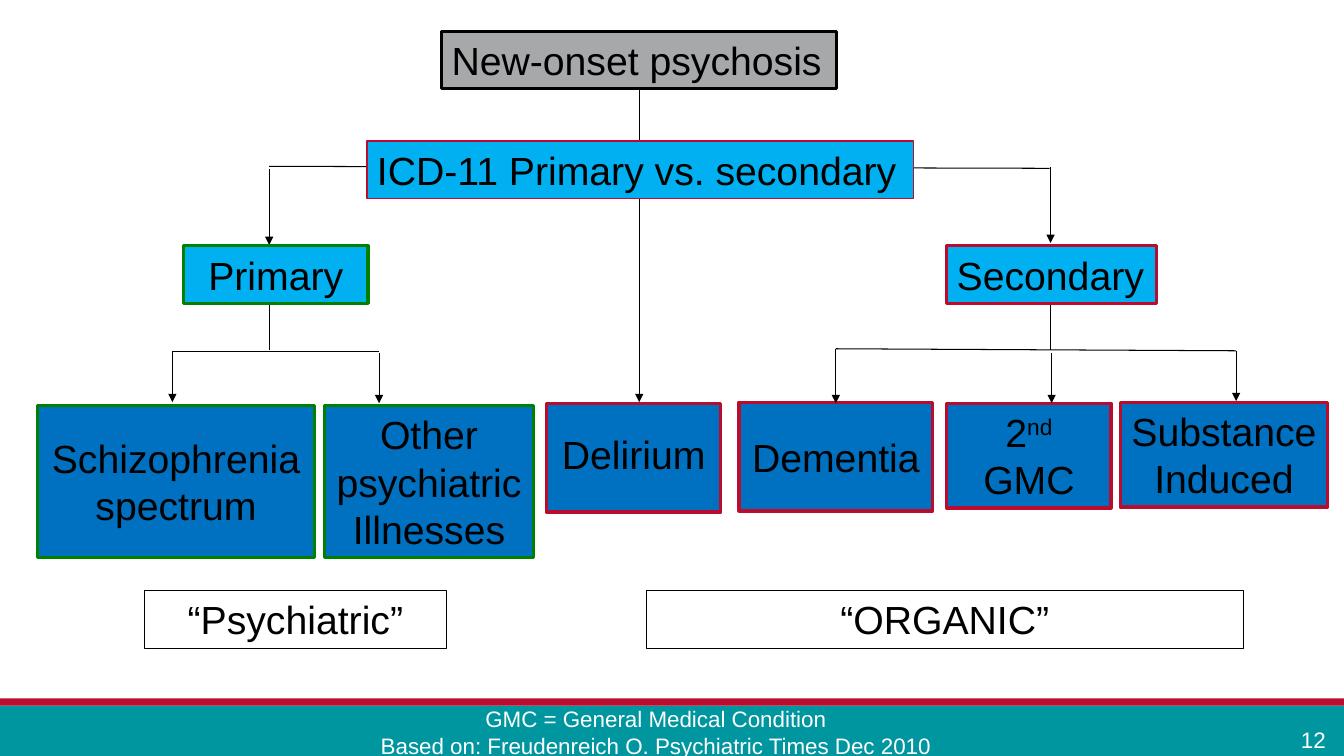
from dataclasses import dataclass

from lxml import etree
from pptx import Presentation
from pptx.dml.color import RGBColor
from pptx.enum.shapes import MSO_CONNECTOR, MSO_SHAPE
from pptx.enum.text import MSO_ANCHOR, PP_ALIGN
from pptx.oxml.ns import qn
from pptx.util import Emu, Pt

RECTANGLE = MSO_SHAPE.RECTANGLE
STRAIGHT = MSO_CONNECTOR.STRAIGHT
TOP, MIDDLE = MSO_ANCHOR.TOP, MSO_ANCHOR.MIDDLE
LEFT, CENTER = PP_ALIGN.LEFT, PP_ALIGN.CENTER

BLACK = RGBColor(0x00, 0x00, 0x00)
WHITE = RGBColor(0xFF, 0xFF, 0xFF)
GRAY = RGBColor(0xA7, 0xA8, 0xAA)
TEAL = RGBColor(0x00, 0x96, 0x9F)
CRIMSON = RGBColor(0xBA, 0x0C, 0x2F)
GREEN = RGBColor(0x00, 0x80, 0x00)
BLUE = RGBColor(0x00, 0x70, 0xC0)
SKY = RGBColor(0x00, 0xB0, 0xF0)

EMU_PER_PX = 9144  # 100 px to the inch
PAGE_WIDTH, PAGE_HEIGHT = 1333, 750
INSET = 5


def px(length: int) -> Emu:
    return Emu(length * EMU_PER_PX)


@dataclass
class Box:
    """A rectangle; each text line is a paragraph, and ^ marks a superscript part."""
    left: int
    top: int
    width: int
    height: int
    lines: tuple[str, ...] = ()
    fill: RGBColor | None = None
    border: RGBColor | None = None
    border_points: float = 2.25
    align: PP_ALIGN = CENTER
    anchor: MSO_ANCHOR = TOP
    inset_top: int = INSET
    size: int = 28
    color: RGBColor = BLACK


@dataclass
class Link:
    x1: int
    y1: int
    x2: int
    y2: int
    arrow: bool = False


BANDS = [
    Box(0, 700, PAGE_WIDTH, 50, fill=TEAL),
    Box(0, 693, PAGE_WIDTH, 7, fill=CRIMSON),
]

DIAGNOSES = [
    Box(37, 402, 275, 151, ("Schizophrenia spectrum",), BLUE, GREEN, anchor=MIDDLE),
    Box(322, 402, 207, 151, ("Other", "psychiatric", "Illnesses"), BLUE, GREEN, anchor=MIDDLE),
    Box(542, 400, 173, 108, ("Delirium",), BLUE, CRIMSON, inset_top=27),
    Box(733, 399, 192, 108, ("Dementia",), BLUE, CRIMSON, inset_top=31),
    Box(939, 400, 163, 104, ("2^nd^ GMC",), BLUE, CRIMSON),
    Box(1111, 399, 206, 104, ("Substance", "Induced"), BLUE, CRIMSON),
]

LINKS = [
    # Classification to primary and secondary
    Link(267, 165, 1041, 167),
    Link(267, 168, 267, 243, True),
    Link(1042, 166, 1042, 241, True),
    # Primary branch
    Link(267, 297, 267, 347),
    Link(171, 349, 376, 349),
    Link(171, 349, 171, 399, True),
    Link(376, 350, 376, 400, True),
    # Secondary branch
    Link(829, 346, 1226, 348),
    Link(1042, 297, 1042, 347),
    Link(829, 346, 829, 400, True),
    Link(1226, 348, 1226, 398, True),
    Link(1043, 350, 1043, 400, True),
    # Root down to delirium
    Link(634, 88, 634, 399, True),
]

HEADINGS = [
    Box(438, 31, 392, 57, ("New-onset psychosis",), GRAY, BLACK, align=LEFT),
    Box(364, 140, 542, 57, ("ICD-11 Primary vs. secondary",), SKY, CRIMSON, 1, LEFT),
    Box(182, 244, 183, 57, ("Primary",), SKY, GREEN),
    Box(939, 244, 208, 57, ("Secondary",), SKY, CRIMSON, align=LEFT),
    Box(143, 586, 300, 57, ("“Psychiatric”",), None, BLACK, 0.75),
    Box(641, 586, 592, 57, ("“ORGANIC”",), None, BLACK, 0.75),
]

FOOTER = [
    Box(364, 695, 573, 64,
        ("GMC = General Medical Condition",
         "Based on: Freudenreich O. Psychiatric Times Dec 2010"),
        size=16, color=WHITE),
    Box(1272, 714, 61, 40, ("12",), anchor=MIDDLE, size=16, color=WHITE),
]


def write_text(frame, box: Box) -> None:
    frame_format = {"word_wrap": True, "vertical_anchor": box.anchor,
                    "margin_top": px(box.inset_top)}
    for name, value in frame_format.items():
        setattr(frame, name, value)
    font_format = {"name": "Arial", "size": Pt(box.size), "bold": False}
    for number, line in enumerate(box.lines):
        para = frame.add_paragraph() if number else frame.paragraphs[0]
        para.alignment = box.align
        for part, text in enumerate(line.split("^")):
            span = para.add_run()
            span.text = text
            for name, value in font_format.items():
                setattr(span.font, name, value)
            span.font.color.rgb = box.color
            if part % 2:
                span.font._element.set("baseline", "30000")


def draw_box(page, box: Box) -> None:
    place = [px(length) for length in (box.left, box.top, box.width, box.height)]
    if box.fill is None and box.border is None:
        shape = page.shapes.add_textbox(*place)
    else:
        shape = page.shapes.add_shape(RECTANGLE, *place)
        shape.shadow.inherit = False
        if box.fill is None:
            shape.fill.background()
        else:
            shape.fill.solid()
            shape.fill.fore_color.rgb = box.fill
        if box.border is None:
            shape.line.fill.background()
        else:
            shape.line.color.rgb = box.border
            shape.line.width = Pt(box.border_points)
    if box.lines:
        write_text(shape.text_frame, box)


def draw_link(page, link: Link) -> None:
    ends = [px(length) for length in (link.x1, link.y1, link.x2, link.y2)]
    connector = page.shapes.add_connector(STRAIGHT, *ends)
    connector.line.color.rgb = BLACK
    connector.line.width = Pt(0.75)
    if link.arrow:
        etree.SubElement(connector.line._get_or_add_ln(), qn("a:tailEnd"), type="triangle")
    etree.SubElement(connector._element.spPr, qn("a:effectLst"))


def main() -> None:
    deck = Presentation()
    deck.slide_width, deck.slide_height = px(PAGE_WIDTH), px(PAGE_HEIGHT)
    page = deck.slides.add_slide(deck.slide_layouts[6])
    for box in BANDS + DIAGNOSES:
        draw_box(page, box)
    for link in LINKS:
        draw_link(page, link)
    for box in HEADINGS + FOOTER:
        draw_box(page, box)
    deck.save("out.pptx")


if __name__ == "__main__":
    main()
